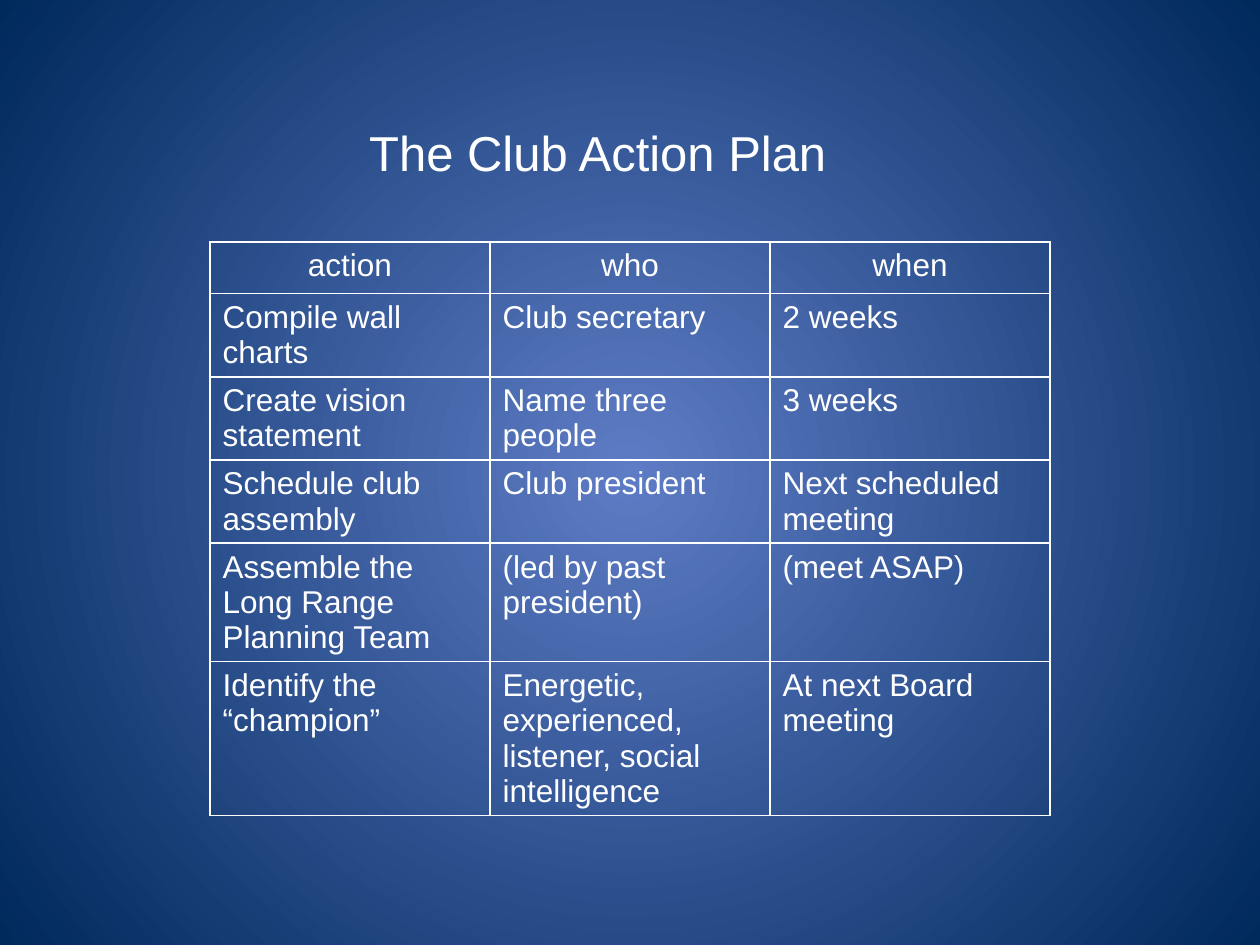
from dataclasses import dataclass

from lxml import etree
from pptx import Presentation
from pptx.dml.color import RGBColor
from pptx.enum.text import MSO_ANCHOR, PP_ALIGN
from pptx.oxml import parse_xml
from pptx.oxml.ns import nsdecls, qn
from pptx.util import Inches, Pt

LEFT, CENTER = PP_ALIGN.LEFT, PP_ALIGN.CENTER
MIDDLE = MSO_ANCHOR.MIDDLE
TITLE_ONLY = 5


@dataclass(frozen=True)
class Theme:
    font: str = "Arial"
    text: str = "FFFFFF"
    glow: str = "5E7CC5"
    edge: str = "00295C"
    title_size: int = 28
    cell_size: int = 18
    border: int = 1


THEME = Theme()
WIDTH, HEIGHT = Inches(10), Inches(7.5)

# Table grid: two thirds of the slide wide, rows sized by their text lines
TABLE_LEFT, TABLE_TOP = WIDTH // 6, Inches(1.92)
COLUMN_WIDTH = WIDTH * 2 // 9
HEADER_HEIGHT, LINE_HEIGHT, ROW_PADDING = Inches(0.41), Inches(0.28), Inches(0.1)

HEADER = ("action", "who", "when")
# Text lines in the tallest cell, then the three cells
ACTIONS = [
    (2, "Compile wall charts", "Club secretary", "2 weeks"),
    (2, "Create vision statement", "Name three people", "3 weeks"),
    (2, "Schedule club assembly", "Club president", "Next scheduled meeting"),
    (3, "Assemble the Long Range Planning Team", "(led by past president)",
     "(meet ASAP)"),
    (4, "Identify the “champion”",
     "Energetic, experienced, listener, social intelligence",
     "At next Board meeting"),
]


def set_text(tf, text, size, align):
    tf.text = text
    p = tf.paragraphs[0]
    p.alignment = align
    font = p.runs[0].font
    font.name, font.size, font.bold = THEME.font, Pt(size), False
    font.color.rgb = RGBColor.from_string(THEME.text)


def set_background(s):
    """Radial gradient that glows from the centre of the slide."""
    fill = s.background.fill
    fill.gradient()
    for stop, color, position in zip(
            fill.gradient_stops, (THEME.glow, THEME.edge), (0, 1)):
        stop.color.rgb = RGBColor.from_string(color)
        stop.position = position
    grad = s.background._cSld.find(".//" + qn("a:gradFill"))
    grad.remove(grad.find(qn("a:lin")))
    radial = parse_xml(
        f'<a:path {nsdecls("a")} path="circle">'
        '<a:fillToRect l="50000" t="50000" r="50000" b="50000"/></a:path>')
    grad.find(qn("a:gsLst")).addnext(radial)


def set_borders(cell):
    tc_pr = cell._tc.get_or_add_tcPr()
    for i, side in enumerate(("lnL", "lnR", "lnT", "lnB")):
        line = etree.Element(qn(f"a:{side}"), w=str(Pt(THEME.border)))
        solid = etree.SubElement(line, qn("a:solidFill"))
        etree.SubElement(solid, qn("a:srgbClr"), val=THEME.text)
        tc_pr.insert(i, line)


def add_title(s, text):
    sp = s.shapes.title
    sp.left, sp.top = Inches(2.83), Inches(0.92)
    sp.width, sp.height = Inches(3.87), Inches(0.57)
    tf = sp.text_frame
    set_text(tf, text, THEME.title_size, LEFT)
    tf.word_wrap = False
    tf.vertical_anchor = MIDDLE


def add_plan(s):
    rows = [HEADER] + [cells for _, *cells in ACTIONS]
    heights = [HEADER_HEIGHT] + [
        ROW_PADDING + lines * LINE_HEIGHT for lines, *_ in ACTIONS]
    table = s.shapes.add_table(
        len(rows), len(HEADER), TABLE_LEFT, TABLE_TOP,
        COLUMN_WIDTH * len(HEADER), sum(heights)).table
    table.first_row = table.horz_banding = False
    for r, (texts, height) in enumerate(zip(rows, heights)):
        table.rows[r].height = height
        for c, text in enumerate(texts):
            cell = table.cell(r, c)
            cell.fill.background()
            set_borders(cell)
            set_text(cell.text_frame, text, THEME.cell_size,
                     LEFT if r else CENTER)


def main():
    prs = Presentation()
    prs.slide_width, prs.slide_height = WIDTH, HEIGHT
    s = prs.slides.add_slide(prs.slide_layouts[TITLE_ONLY])
    set_background(s)
    add_plan(s)
    add_title(s, "The Club Action Plan")
    prs.save("out.pptx")


if __name__ == "__main__":
    main()
